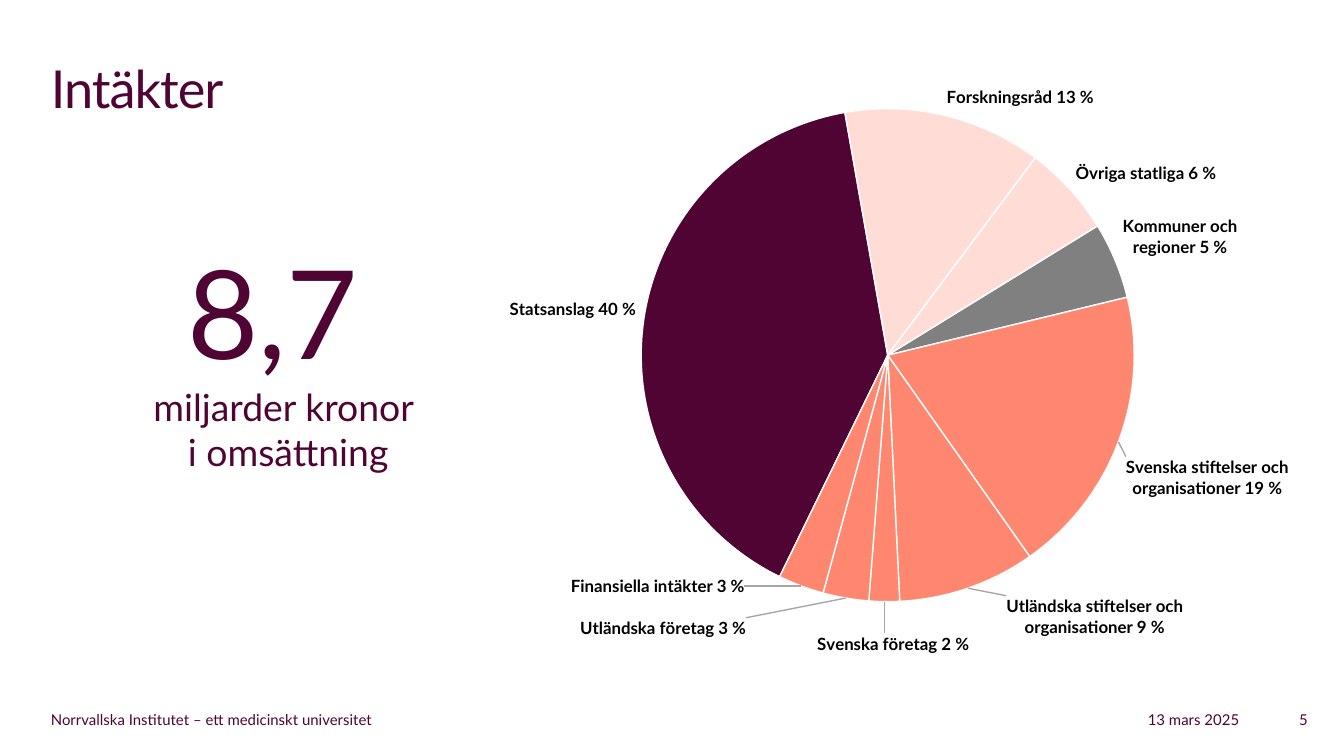
from lxml.etree import SubElement
from pptx import Presentation
from pptx.chart.data import CategoryChartData
from pptx.dml.color import RGBColor
from pptx.enum.chart import XL_CHART_TYPE, XL_LABEL_POSITION
from pptx.enum.text import PP_ALIGN
from pptx.oxml import parse_xml
from pptx.oxml.ns import nsdecls, qn
from pptx.util import Inches, Pt

FONT = "Lato"
PLUM, PINK, GREY, CORAL = "4F0433", "FFDDD6", "808080", "FF876F"
WHITE, BLACK, LEADER = "FFFFFF", "000000", "A6A6A6"
C15 = "http://schemas.microsoft.com/office/drawing/2012/chart"

# Category, share in percent, slice colour,
# label offset and label size (fractions of the chart)
INCOME = [
    ("Statsanslag", 40, PLUM, None, None),
    ("Forskningsråd", 13, PINK, None, None),
    ("Övriga statliga", 6, PINK, None, None),
    ("Kommuner och regioner", 5, GREY, None, None),
    ("Svenska stiftelser och organisationer", 19, CORAL, (0, 0.02), None),
    ("Utländska stiftelser och organisationer", 9, CORAL, (0.04, 0), (0.19, 0.08)),
    ("Svenska företag", 2, CORAL, (0.01, 0.04), None),
    ("Utländska företag", 3, CORAL, (-0.11, 0.02), None),
    ("Finansiella intäkter", 3, CORAL, (-0.06, -0.03), (0.18, 0.08)),
]


def rgb(value):
    return RGBColor.from_string(value)


def set_font(font, size, color, **extra):
    values = {"name": FONT, "size": Pt(size), **extra}
    for key, value in values.items():
        setattr(font, key, value)
    font.color.rgb = rgb(color)


def add_text(s, box, lines, align=PP_ALIGN.LEFT, spacing=None):
    """One paragraph; lines are (text, size) parted by line breaks."""
    tf = s.shapes.add_textbox(*map(Inches, box)).text_frame
    tf.word_wrap = True
    p = tf.paragraphs[0]
    p.alignment = align
    for i, (text, size) in enumerate(lines):
        if i:
            p.add_line_break()
        r = p.add_run()
        r.text = text
        set_font(r.font, size, PLUM)
        if spacing:
            r.font._element.set("spc", str(spacing))


def add_manual(layout, **values):
    manual = SubElement(layout, qn("c:manualLayout"))
    for tag, value in values.items():
        SubElement(manual, qn(f"c:{tag}")).set("val", str(value))


def add_layout(parent, index, **values):
    """Place a chart part by hand, in fractions of the chart."""
    for old in parent.findall(qn("c:layout")):
        parent.remove(old)
    layout = SubElement(parent, qn("c:layout"))
    parent.insert(index, layout)
    add_manual(layout, **values)


def move_label(series, index, offset, size):
    label = series.points[index].data_label
    set_font(label.font, 9, BLACK, bold=True)
    label.position = XL_LABEL_POSITION.OUTSIDE_END
    xml = series.data_labels._element.xpath(f"c:dLbl[c:idx/@val='{index}']")[0]
    xml.find(qn("c:showVal")).set("val", "0")
    xml.find(qn("c:showCatName")).set("val", "1")
    add_layout(xml, 1, x=offset[0], y=offset[1])
    if size:
        ext = SubElement(SubElement(xml, qn("c:extLst")), qn("c:ext"),
                         uri="{CE6537A1-D6FC-4f65-9D91-7224C49458BB}")
        layout = SubElement(ext, f"{{{C15}}}layout", nsmap={"c15": C15})
        add_manual(layout, w=size[0], h=size[1])


def color_leader_lines(labels):
    xml = labels._element
    show = xml.find(qn("c:showLeaderLines"))
    if show is None:
        show = SubElement(xml, qn("c:showLeaderLines"))
    show.set("val", "1")
    show.addnext(parse_xml(
        f'<c:leaderLines {nsdecls("c", "a")}><c:spPr><a:ln w="9525"><a:solidFill>'
        f'<a:srgbClr val="{LEADER}"/></a:solidFill></a:ln></c:spPr></c:leaderLines>'))


def add_pie(s, box):
    data = CategoryChartData()
    data.categories = [f"{name} {share} %" for name, share, *_ in INCOME]
    data.add_series("Series 1", [row[1] for row in INCOME])
    chart = s.shapes.add_chart(XL_CHART_TYPE.PIE, *map(Inches, box), data).chart
    chart.has_legend = chart.has_title = False
    set_font(chart.font, 10, BLACK)

    # Plot area and rotation
    pie = chart.plots[0]
    pie.vary_by_categories = True
    xml = pie._element
    add_layout(xml.getparent(), 0, layoutTarget="inner", xMode="edge",
               yMode="edge", x=0.21, y=0.07, w=0.55, h=0.83)
    angle = xml.find(qn("c:firstSliceAng"))
    if angle is None:
        angle = SubElement(xml, qn("c:firstSliceAng"))
    angle.set("val", "206")

    # Labels and slices
    series = pie.series[0]
    labels = series.data_labels
    formats = {"show_category_name": True, "show_value": False,
               "position": XL_LABEL_POSITION.OUTSIDE_END}
    for key, value in formats.items():
        setattr(labels, key, value)
    set_font(labels.font, 9, BLACK, bold=True)
    color_leader_lines(labels)
    for i, (_, _, color, offset, size) in enumerate(INCOME):
        look = series.points[i].format
        look.fill.solid()
        look.fill.fore_color.rgb = rgb(color)
        look.line.color.rgb = rgb(WHITE)
        look.line.width = Pt(0.75)
        if offset:
            move_label(series, i, offset, size)


def main():
    prs = Presentation()
    prs.slide_width = Inches(10)
    prs.slide_height = prs.slide_width * 9 // 16
    s = prs.slides.add_slide(prs.slide_layouts[6])

    # Title and key figure
    add_text(s, (0.28, 0.37, 9.44, 0.94), [("Intäkter", 28)], spacing=-50)
    add_text(s, (0.31, 1.71, 3.67, 1.88),
             [("8,7 ", 66), ("miljarder kronor ", 20), ("i omsättning", 20)],
             PP_ALIGN.CENTER)

    # Income by source
    add_pie(s, (3.37, 0.49, 6.67, 4.44))

    # Footer
    for left, width, text, align in [
        (0.28, 3.07, "Norrvallska Institutet – ett medicinskt universitet", PP_ALIGN.LEFT),
        (7.24, 2.08, "13 mars 2025", PP_ALIGN.RIGHT),
        (9.08, 0.75, "5", PP_ALIGN.RIGHT),
    ]:
        add_text(s, (left, 5.24, width, 0.19), [(text, 8)], align)

    prs.save("out.pptx")


if __name__ == "__main__":
    main()
